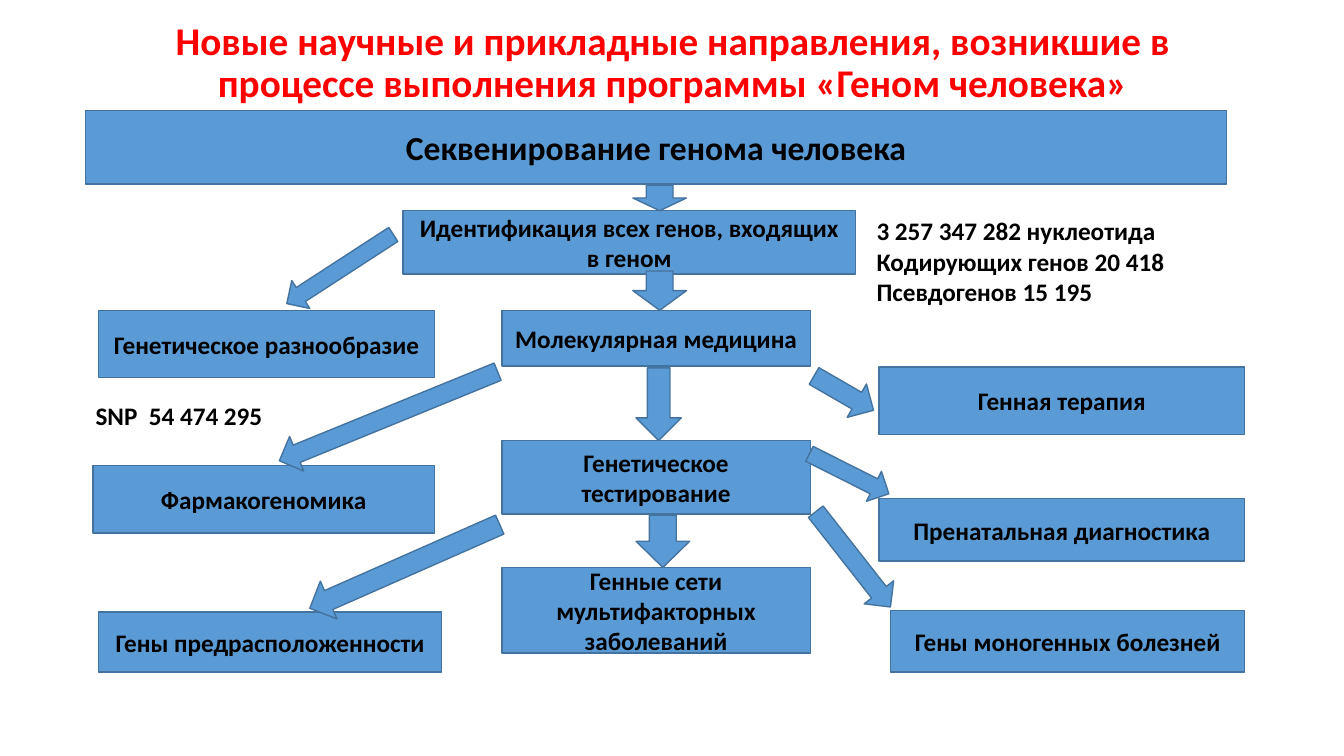
from dataclasses import dataclass

import pptx
import pptx.dml.color
import pptx.enum.shapes
import pptx.enum.text
import pptx.util

Cm = pptx.util.Cm
Preset = pptx.enum.shapes.MSO_SHAPE
Anchor = pptx.enum.text.MSO_ANCHOR
Align = pptx.enum.text.PP_ALIGN

FONT = "Calibri"
COLORS = {"title": "FF0000", "text": "000000", "fill": "5B9BD5", "line": "43739E"}


@dataclass(frozen=True)
class Frame:
    """Position and size in centimetres."""
    left: float
    top: float
    width: float
    height: float

    def lengths(self) -> tuple:
        return Cm(self.left), Cm(self.top), Cm(self.width), Cm(self.height)


@dataclass(frozen=True)
class Box:
    text: str
    frame: Frame
    size: int = 18
    preset: Preset = Preset.RECTANGLE


@dataclass(frozen=True)
class Arrow:
    frame: Frame
    rotation: float = 0


@dataclass(frozen=True)
class Label:
    lines: tuple[str, ...]
    frame: Frame
    size: int = 18
    color: str = "text"
    align: Align = Align.LEFT
    anchor: Anchor = Anchor.TOP
    line_spacing: float = 1.0


LABELS = [
    Label(("Новые научные и прикладные направления, возникшие в процессе "
           "выполнения программы «Геном человека»",),
          Frame(2.34, 0, 29.21, 3.2), 28, "title", Align.CENTER, Anchor.MIDDLE, 0.9),
    Label(("3 257 347 282 нуклеотида", "Кодирующих генов 20 418", "Псевдогенов 15 195"),
          Frame(21.84, 5.31, 8.86, 2.57)),
    Label(("SNP  54 474 295",), Frame(2.16, 9.96, 6.73, 1.02)),
]

BOXES = [
    Box("Секвенирование генома человека", Frame(2.16, 2.79, 28.75, 1.85), 24),
    Box("Идентификация всех генов, входящих в геном", Frame(10.16, 5.31, 11.4, 1.6),
        preset=Preset.FLOWCHART_PROCESS),
    Box("Молекулярная медицина", Frame(12.65, 7.82, 7.77, 1.4)),
    Box("Генетическое тестирование", Frame(12.65, 11.1, 7.77, 1.85)),
    Box("Генные сети мультифакторных заболеваний", Frame(12.65, 14.3, 7.77, 2.16)),
    Box("Генетическое разнообразие", Frame(2.49, 7.82, 8.46, 1.7),
        preset=Preset.FLOWCHART_PROCESS),
    Box("Фармакогеномика", Frame(2.34, 11.73, 8.61, 1.7),
        preset=Preset.FLOWCHART_PROCESS),
    Box("Гены предрасположенности", Frame(2.49, 15.42, 8.64, 1.52)),
    Box("Генная терапия", Frame(22.15, 9.25, 9.22, 1.7)),
    Box("Пренатальная диагностика", Frame(22.15, 12.57, 9.22, 1.57)),
    Box("Гены моногенных болезней", Frame(22.45, 15.39, 8.92, 1.55)),
]

ARROWS = [
    Arrow(Frame(15.95, 4.67, 1.35, 0.64)),
    Arrow(Frame(15.95, 6.83, 1.35, 0.99)),
    Arrow(Frame(16.03, 9.27, 1.14, 1.83)),
    Arrow(Frame(16.03, 12.98, 1.35, 1.32)),
    Arrow(Frame(8.15, 5.18, 0.84, 3.2), 57),
    Arrow(Frame(9.32, 7.52, 0.94, 5.94), 67.8),
    Arrow(Frame(9.68, 11.66, 1.04, 5.23), 66.2),
    Arrow(Frame(20.78, 9.04, 0.97, 1.73), 300),
    Arrow(Frame(20.98, 10.82, 0.84, 2.24), 296.7),
    Arrow(Frame(21.03, 12.57, 0.94, 3.05), 321.9),
]


def rgb(name: str) -> pptx.dml.color.RGBColor:
    return pptx.dml.color.RGBColor.from_string(COLORS[name])


def write_text(shape, label: Label) -> None:
    text_frame = shape.text_frame
    text_frame.word_wrap = True
    text_frame.vertical_anchor = label.anchor
    text_frame.text = "\n".join(label.lines)
    for paragraph in text_frame.paragraphs:
        paragraph.alignment = label.align
        paragraph.line_spacing = label.line_spacing
        paragraph.font.name = FONT
        paragraph.font.size = pptx.util.Pt(label.size)
        paragraph.font.bold = True
        paragraph.font.color.rgb = rgb(label.color)


def add_filled_shape(slide, preset: Preset, frame: Frame):
    shape = slide.shapes.add_shape(preset, *frame.lengths())
    shape.shadow.inherit = False
    shape.fill.solid()
    shape.fill.fore_color.rgb = rgb("fill")
    shape.line.color.rgb = rgb("line")
    shape.line.width = pptx.util.Pt(1)
    return shape


def add_label(slide, label: Label) -> None:
    write_text(slide.shapes.add_textbox(*label.frame.lengths()), label)


def add_box(slide, box: Box) -> None:
    shape = add_filled_shape(slide, box.preset, box.frame)
    write_text(shape, Label((box.text,), box.frame, box.size,
                            align=Align.CENTER, anchor=Anchor.MIDDLE))


def add_arrow(slide, arrow: Arrow) -> None:
    shape = add_filled_shape(slide, Preset.DOWN_ARROW, arrow.frame)
    shape.rotation = arrow.rotation


def main() -> None:
    presentation = pptx.Presentation()
    presentation.slide_width = Cm(33.87)
    presentation.slide_height = Cm(19.05)
    slide = presentation.slides.add_slide(presentation.slide_layouts[6])
    title, *notes = LABELS
    add_label(slide, title)
    for box in BOXES:
        add_box(slide, box)
    for arrow in ARROWS:
        add_arrow(slide, arrow)
    for note in notes:
        add_label(slide, note)
    presentation.save("out.pptx")


if __name__ == "__main__":
    main()
